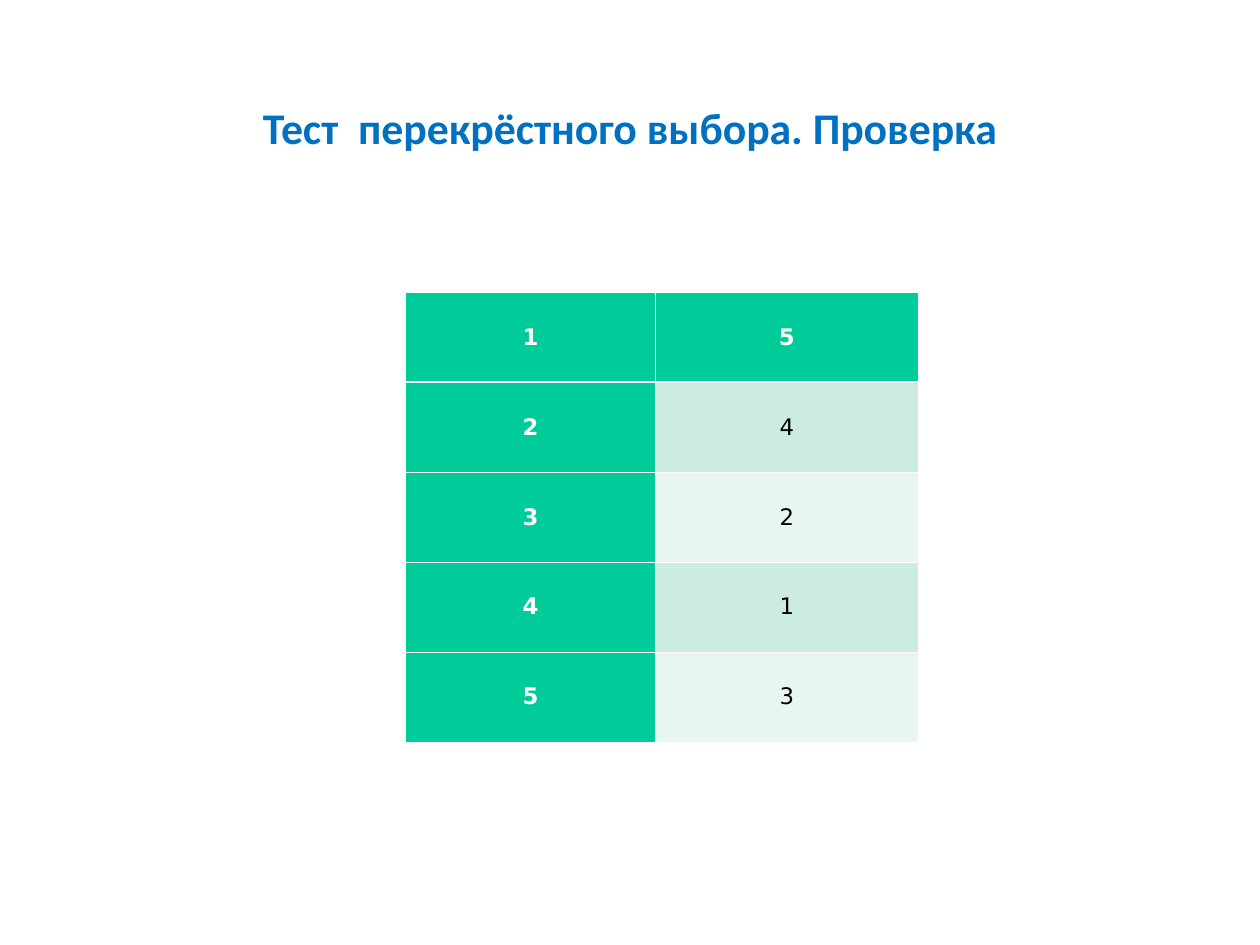
from lxml import etree
from pptx import Presentation
from pptx import util as u
from pptx.dml.color import RGBColor
from pptx.enum import text
from pptx.oxml import ns

TITLE = "Тест  перекрёстного выбора. Проверка"
ANSWERS = [("1", "5"), ("2", "4"), ("3", "2"), ("4", "1"), ("5", "3")]
COLORS = {
    "title": "0070C0", "key": "00CC99", "odd": "CBECDE", "even": "E7F6EF",
    "light": "FFFFFF", "dark": "000000",
}
COLUMNS = (1.98, 2.09)
TABLE_LEFT, TABLE_TOP, TABLE_HEIGHT = 3.22, 2.32, 3.57
THIN, THICK = 0.45, 1.47


def rgb(name):
    return RGBColor.from_string(COLORS[name])


def set_font(p, name, size, color, bold):
    f = p.font
    f.name, f.size, f.bold = name, u.Pt(size), bold
    f.color.rgb = rgb(color)


def set_borders(cell, widths):
    """Draw light borders; widths maps lnL, lnR, lnT, lnB to points."""
    pr = cell._tc.get_or_add_tcPr()
    for i, (side, width) in enumerate(widths.items()):
        ln = etree.Element(ns.qn(f"a:{side}"), w=str(int(u.Pt(width))))
        fill = etree.SubElement(ln, ns.qn("a:solidFill"))
        etree.SubElement(fill, ns.qn("a:srgbClr"), val=COLORS["light"])
        pr.insert(i, ln)


def add_title(s):
    sp = s.shapes.title
    sp.left, sp.top, sp.width, sp.height = map(u.Inches, (1.96, 0.75, 6.08, 0.51))
    tf = sp.text_frame
    tf.text = TITLE
    tf.word_wrap = False
    tf.vertical_anchor = text.MSO_ANCHOR.MIDDLE
    p = tf.paragraphs[0]
    p.alignment = text.PP_ALIGN.CENTER
    set_font(p, "Calibri", 25, "title", True)


def add_answers(s):
    rows = len(ANSWERS)
    table = s.shapes.add_table(
        rows, len(COLUMNS), u.Inches(TABLE_LEFT), u.Inches(TABLE_TOP),
        u.Inches(sum(COLUMNS)), u.Inches(TABLE_HEIGHT)).table
    for column, width in zip(table.columns, COLUMNS):
        column.width = u.Inches(width)
    for r, answer in enumerate(ANSWERS):
        table.rows[r].height = u.Inches(TABLE_HEIGHT / rows)
        for c, value in enumerate(answer):
            cell = table.cell(r, c)
            is_key = r == 0 or c == 0
            cell.text = value
            cell.vertical_anchor = text.MSO_ANCHOR.MIDDLE
            cell.margin_left = cell.margin_right = u.Inches(0.07)
            cell.margin_top = cell.margin_bottom = 0
            cell.fill.solid()
            cell.fill.fore_color.rgb = rgb("key" if is_key else "odd" if r % 2 else "even")
            p = cell.text_frame.paragraphs[0]
            p.alignment = text.PP_ALIGN.CENTER
            set_font(p, "DejaVu Sans", 13, "light" if is_key else "dark", is_key)
            set_borders(cell, {
                "lnL": THIN, "lnR": THIN,
                "lnT": THICK if r == 1 else THIN,
                "lnB": THICK if r == 0 else THIN,
            })


def main():
    prs = Presentation()
    prs.slide_width, prs.slide_height = u.Inches(10), u.Inches(7.5)
    s = prs.slides.add_slide(prs.slide_layouts[5])
    add_title(s)
    add_answers(s)
    prs.save("out.pptx")


if __name__ == "__main__":
    main()
